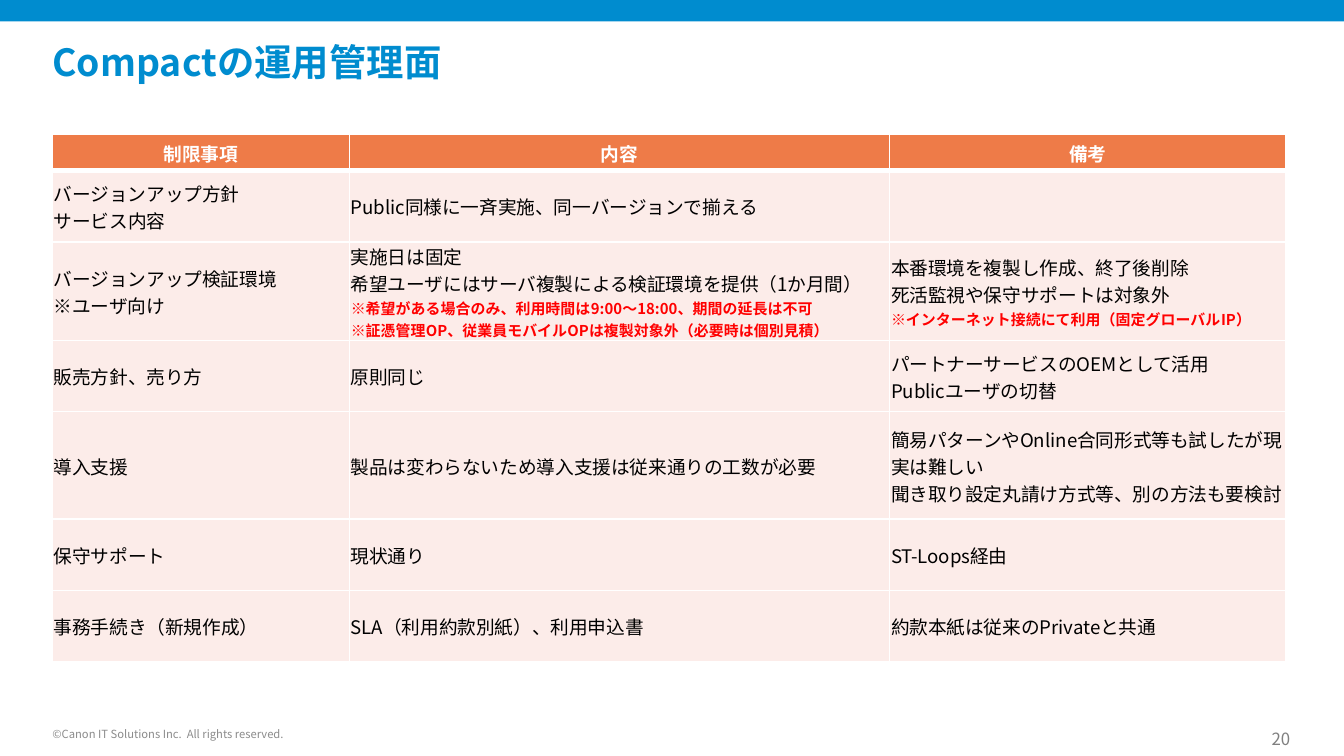
from lxml.etree import SubElement
from pptx import Presentation
from pptx.dml.color import RGBColor
from pptx.enum.shapes import MSO_SHAPE
from pptx.enum.text import MSO_ANCHOR, PP_ALIGN
from pptx.oxml.ns import qn
from pptx.util import Inches, Pt

# Content: each cell is a list of lines; lines in NOTES are set small and red
TITLE = "Compactの運用管理面"
COPYRIGHT = "©Canon IT Solutions Inc.  All rights reserved."
PAGE_NUMBER = "20"
HEADINGS = ["制限事項", "内容", "備考"]
ROWS = [
    (["バージョンアップ方針", "サービス内容"],
     ["Public同様に一斉実施、同一バージョンで揃える"],
     []),
    (["バージョンアップ検証環境", "※ユーザ向け"],
     ["実施日は固定",
      "希望ユーザにはサーバ複製による検証環境を提供（1か月間）",
      "※希望がある場合のみ、利用時間は9:00～18:00、期間の延長は不可",
      "※証憑管理OP、従業員モバイルOPは複製対象外（必要時は個別見積）"],
     ["本番環境を複製し作成、終了後削除",
      "死活監視や保守サポートは対象外",
      "※インターネット接続にて利用（固定グローバルIP）"]),
    (["販売方針、売り方"],
     ["原則同じ"],
     ["パートナーサービスのOEMとして活用", "Publicユーザの切替"]),
    (["導入支援"],
     ["製品は変わらないため導入支援は従来通りの工数が必要"],
     ["簡易パターンやOnline合同形式等も試したが現実は難しい",
      "聞き取り設定丸請け方式等、別の方法も要検討"]),
    (["保守サポート"], ["現状通り"], ["ST-Loops経由"]),
    (["事務手続き（新規作成）"],
     ["SLA（利用約款別紙）、利用申込書"],
     ["約款本紙は従来のPrivateと共通"]),
]
NOTES = {line for row in ROWS for cell in row[1:] for line in cell
         if line.startswith("※")}

FONT = "Noto Sans CJK JP"
BLUE, ORANGE, PINK = "008CCF", "EE7B48", "FCECE9"
WHITE, BLACK, RED = "FFFFFF", "000000", "FF0000"
COLUMN_WIDTHS = [2.21, 4.02, 2.95]
ROW_HEIGHTS = [0.27, 0.53, 0.71, 0.53, 0.8, 0.53, 0.53]
LEFT = 0.39


def rgb(code):
    return RGBColor.from_string(code)


def write(paragraph, text, size=10, color=BLACK, bold=False,
          align=PP_ALIGN.LEFT):
    paragraph.alignment = align
    run = paragraph.add_run()
    run.text = text
    run.font.size, run.font.bold, run.font.name = Pt(size), bold, FONT
    run.font.color.rgb = rgb(color)
    SubElement(run.font._element, qn("a:ea"), typeface=FONT)


def prepare(frame, anchor):
    frame.margin_left = frame.margin_right = 0
    frame.margin_top = frame.margin_bottom = 0
    frame.word_wrap = True
    frame.vertical_anchor = anchor
    return frame.paragraphs[0]


def add_footer(left, top, width, text, **style):
    box = slide.shapes.add_textbox(Inches(left), Inches(top),
                                   Inches(width), Inches(0.15))
    write(prepare(box.text_frame, MSO_ANCHOR.BOTTOM), text, **style)


def fill_cell(cell, lines, fill, bottom_width=1, **style):
    cell.margin_left = cell.margin_right = cell.margin_top = Inches(0.01)
    cell.margin_bottom = 0
    cell.vertical_anchor = MSO_ANCHOR.MIDDLE
    for i, line in enumerate(lines):
        frame = cell.text_frame
        paragraph = frame.add_paragraph() if i else frame.paragraphs[0]
        note = dict(size=8, color=RED, bold=True) if line in NOTES else {}
        write(paragraph, line, **{**style, **note})
    # Borders come before the fill in the cell properties
    properties = cell._tc.get_or_add_tcPr()
    for side in "LRTB":
        points = bottom_width if side == "B" else 1
        border = SubElement(properties, qn(f"a:ln{side}"), w=str(Pt(points)))
        SubElement(SubElement(border, qn("a:solidFill")),
                   qn("a:srgbClr"), val=WHITE)
    cell.fill.solid()
    cell.fill.fore_color.rgb = rgb(fill)


# Slide in 16:9
deck = Presentation()
deck.slide_width = Inches(10)
deck.slide_height = Inches(10 * 9 / 16)
slide = deck.slides.add_slide(deck.slide_layouts[5])

# Top band
band = slide.shapes.add_shape(MSO_SHAPE.RECTANGLE, 0, 0,
                              deck.slide_width, Inches(0.16))
band.shadow.inherit = False
band.fill.solid()
band.fill.fore_color.rgb = rgb(BLUE)
band.line.fill.background()

# Title
title = slide.shapes.title
title.left, title.top = Inches(LEFT), Inches(0.29)
title.width, title.height = Inches(7.76), Inches(0.64)
heading = prepare(title.text_frame, MSO_ANCHOR.TOP)
write(heading, TITLE, size=20, color=BLUE, bold=True)

# Table
table = slide.shapes.add_table(
    len(ROW_HEIGHTS), len(COLUMN_WIDTHS), Inches(LEFT), Inches(1),
    Inches(sum(COLUMN_WIDTHS)), Inches(sum(ROW_HEIGHTS))).table
for column, width in zip(table.columns, COLUMN_WIDTHS):
    column.width = Inches(width)
for row, height in zip(table.rows, ROW_HEIGHTS):
    row.height = Inches(height)
for c, text in enumerate(HEADINGS):
    fill_cell(table.cell(0, c), [text], ORANGE, bottom_width=3,
              color=WHITE, bold=True, align=PP_ALIGN.CENTER)
for r, row in enumerate(ROWS, start=1):
    for c, lines in enumerate(row):
        fill_cell(table.cell(r, c), lines, PINK)

# Footer
add_footer(LEFT, 5.36, 2.36, COPYRIGHT, size=6, color="8C8C8C")
add_footer(9.21, 5.42, 0.39, PAGE_NUMBER, size=9, color="808080",
           align=PP_ALIGN.RIGHT)

deck.save("out.pptx")
